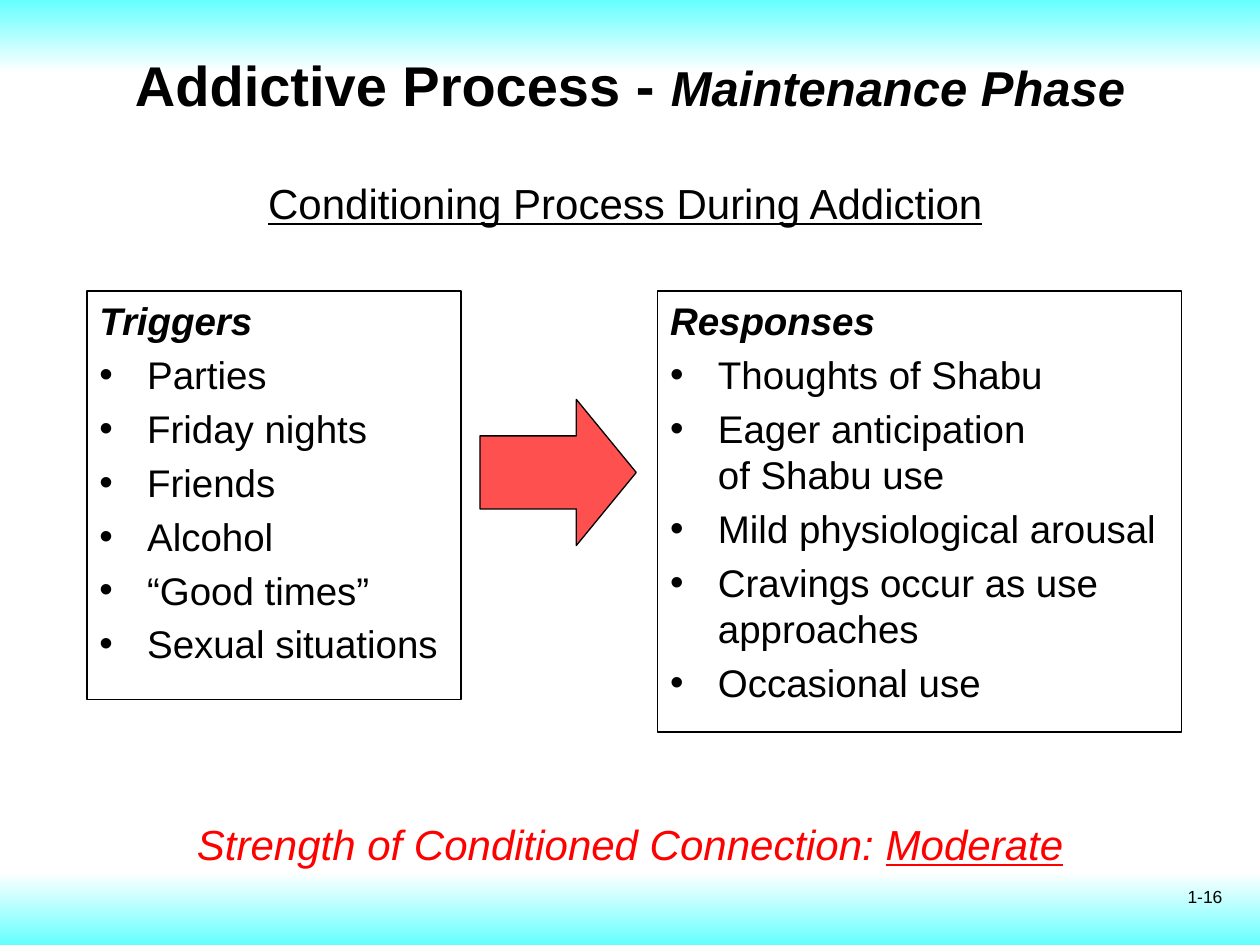
from lxml import etree
from pptx import Presentation
from pptx.dml.color import RGBColor
from pptx.enum.shapes import MSO_SHAPE
from pptx.enum.text import MSO_ANCHOR, PP_ALIGN
from pptx.oxml.ns import qn
from pptx.util import Inches, Pt

RECTANGLE, RIGHT_ARROW = MSO_SHAPE.RECTANGLE, MSO_SHAPE.RIGHT_ARROW
TOP, MIDDLE = MSO_ANCHOR.TOP, MSO_ANCHOR.MIDDLE
LEFT, CENTER, RIGHT = PP_ALIGN.LEFT, PP_ALIGN.CENTER, PP_ALIGN.RIGHT

FONT = "Arial"
BLACK, WHITE, RED, CORAL, AQUA = "000000", "FFFFFF", "FF0000", "FF5050", "66FFFF"
SLIDE_WIDTH, SLIDE_HEIGHT, BAND_HEIGHT = 10, 7.5, 0.58
LIST_SIZE, LIST_INDENT = 22, 0.38

# top, colour at the top edge, colour at the bottom edge
BANDS = [
    (SLIDE_HEIGHT - BAND_HEIGHT, WHITE, AQUA),
    (0, AQUA, WHITE),
]

# box, heading, items
LISTS = [
    ((0.69, 2.31, 2.97, 3.24), "Triggers",
     ["Parties", "Friday nights", "Friends", "Alcohol", "“Good times”",
      "Sexual situations"]),
    ((5.22, 2.31, 4.16, 3.5), "Responses",
     ["Thoughts of Shabu", "Eager anticipation \nof Shabu use",
      "Mild physiological arousal", "Cravings occur as use approaches",
      "Occasional use"]),
]
ARROW_BOX = (3.81, 3.17, 1.24, 1.16)

# box, alignment, anchor, wrap, runs of (text, size, colour, styles)
CAPTIONS = [
    ((7.47, 6.98, 2.33, 0.52), RIGHT, TOP, True, [("1-16", 10, BLACK, "")]),
    ((0.79, 0.31, 8.42, 0.71), CENTER, MIDDLE, True,
     [("Addictive Process - ", 32, BLACK, "b"),
      ("Maintenance Phase", 28, BLACK, "bi")]),
    ((0.79, 6.34, 8.42, 0.71), CENTER, MIDDLE, True,
     [("Strength of Conditioned Connection: ", 24, RED, "i"),
      ("Moderate", 24, RED, "iu")]),
    ((2.03, 1.36, 5.94, 0.5), LEFT, TOP, False,
     [("Conditioning Process During Addiction", 24, BLACK, "u")]),
]


def rgb(value):
    return RGBColor.from_string(value)


def inches(box):
    return [Inches(length) for length in box]


def add_run(paragraph, text, size, color=BLACK, styles=""):
    """Add a run; styles holds any of the letters b, i and u."""
    run = paragraph.add_run()
    run.text = text
    font = run.font
    font.name, font.size = FONT, Pt(size)
    font.color.rgb = rgb(color)
    font.bold, font.italic, font.underline = (s in styles for s in "biu")


def add_outlined(slide, preset, box):
    shape = slide.shapes.add_shape(preset, *inches(box))
    shape.shadow.inherit = False
    shape.line.color.rgb = rgb(BLACK)
    shape.line.width = Pt(0.75)
    return shape


def add_band(slide, top, start, end):
    band = slide.shapes.add_shape(
        RECTANGLE, *inches((0, top, SLIDE_WIDTH, BAND_HEIGHT)))
    band.shadow.inherit = False
    band.line.fill.background()
    band.fill.gradient()
    band.fill.gradient_angle = 270  # counter-clockwise, so top to bottom
    for stop, position, color in zip(band.fill.gradient_stops, (0, 1), (start, end)):
        stop.position = position
        stop.color.rgb = rgb(color)


def add_bullet(paragraph):
    properties = paragraph._p.get_or_add_pPr()
    properties.set("marL", str(Inches(LIST_INDENT)))
    properties.set("indent", str(-Inches(LIST_INDENT)))
    etree.SubElement(properties, qn("a:buFont")).set("typeface", FONT)
    etree.SubElement(properties, qn("a:buChar")).set("char", "•")


def add_list(slide, box, heading, items):
    panel = add_outlined(slide, RECTANGLE, box)
    panel.fill.background()
    frame = panel.text_frame
    frame.word_wrap, frame.vertical_anchor = True, TOP
    for index, text in enumerate([heading, *items]):
        paragraph = frame.add_paragraph() if index else frame.paragraphs[0]
        paragraph.alignment = LEFT
        paragraph.space_before = Pt(0.2 * LIST_SIZE)
        if index:
            add_bullet(paragraph)
        for number, line in enumerate(text.split("\n")):
            if number:
                paragraph.add_line_break()
            add_run(paragraph, line, LIST_SIZE, styles="" if index else "bi")


def add_caption(slide, box, alignment, anchor, wrap, runs):
    frame = slide.shapes.add_textbox(*inches(box)).text_frame
    frame.word_wrap, frame.vertical_anchor = wrap, anchor
    paragraph = frame.paragraphs[0]
    paragraph.alignment = alignment
    for run in runs:
        add_run(paragraph, *run)


def main():
    deck = Presentation()
    deck.slide_width, deck.slide_height = inches((SLIDE_WIDTH, SLIDE_HEIGHT))
    slide = deck.slides.add_slide(deck.slide_layouts[6])

    for band in BANDS:
        add_band(slide, *band)
    for entry in LISTS:
        add_list(slide, *entry)

    arrow = add_outlined(slide, RIGHT_ARROW, ARROW_BOX)
    arrow.fill.solid()
    arrow.fill.fore_color.rgb = rgb(CORAL)
    arrow.adjustments[1] = 0.41

    for caption in CAPTIONS:
        add_caption(slide, *caption)
    deck.save("out.pptx")


if __name__ == "__main__":
    main()
